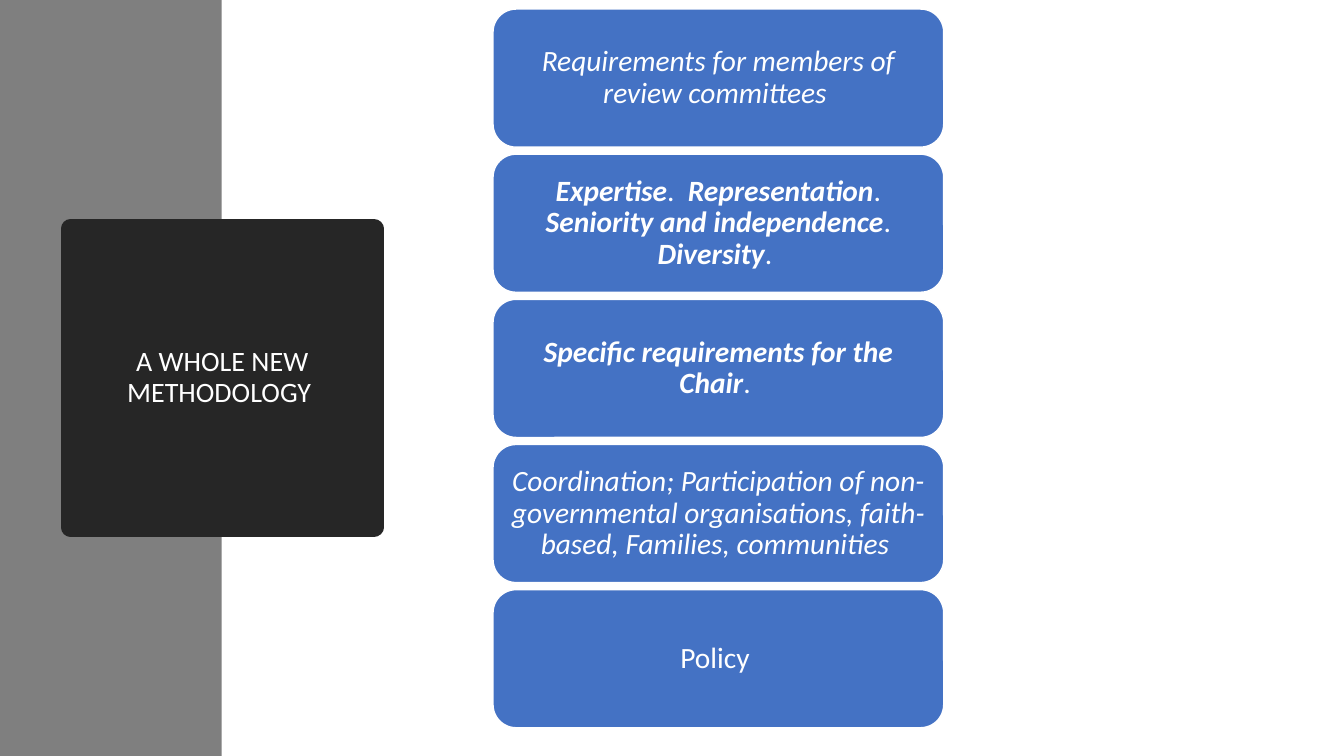
from pptx import Presentation, util as u
from pptx.dml.color import RGBColor
from pptx.enum import shapes, text
from pptx.oxml import parse_xml
from pptx.oxml.ns import nsdecls

WIDE, HIGH = 13.33, 7.5
FONT = "Calibri"
LEFT, TOP, STEP = 4.89, 0.09, 1.44    # column of cards
CARD = (4.47, 1.37)

# Each card is a list of (words, bold, italic)
CARDS = [
    [("Requirements for members of review committees ", False, True)],
    [("Expertise", True, True), (".  ", False, False),
     ("Representation", True, True), (". ", False, False),
     ("Seniority and independence", True, True), (". ", False, False),
     ("Diversity", True, True), (". ", False, False)],
    [("Specific requirements for the Chair", True, True),
     (". ", False, False)],
    [("Coordination; Participation of non-governmental organisations, "
      "faith-based, Families, communities ", False, True)],
    [("Policy ", False, False)],
]


def color(code):
    return RGBColor.from_string(code)


def paint(shape, fill, line=None, width=1):
    shape.fill.solid()
    shape.fill.fore_color.rgb = color(fill)
    if line:
        shape.line.color.rgb = color(line)
        shape.line.width = u.Pt(width)
    else:
        shape.line.fill.background()


def block(slide, kind, left, top, width, height):
    shape = slide.shapes.add_shape(
        kind, *map(u.Inches, (left, top, width, height)))
    shape.shadow.inherit = False
    return shape


def write(shape, runs, size):
    frame = shape.text_frame
    frame.word_wrap = True
    frame.auto_size = text.MSO_AUTO_SIZE.NONE
    frame.vertical_anchor = text.MSO_ANCHOR.MIDDLE
    frame.margin_left = frame.margin_right = u.Inches(0.09)
    frame.margin_top = frame.margin_bottom = u.Inches(0.04)
    para = frame.paragraphs[0]
    para.alignment = text.PP_ALIGN.CENTER
    para.line_spacing = 0.9
    para.font.name = FONT
    para.font.size = u.Pt(size)
    para.font.color.rgb = color("FFFFFF")
    for words, bold, italic in runs:
        run = para.add_run()
        run.text = words
        run.font.bold, run.font.italic = bold, italic


def band(slide):
    shape = block(slide, shapes.MSO_SHAPE.RECTANGLE, 0, 0, 2.2, HIGH)
    paint(shape, "7F7F7F")


def heading(slide):
    title = slide.shapes.title
    title.left, title.top = u.Inches(0.7), u.Inches(2.27)
    title.width, title.height = u.Inches(3.01), u.Inches(2.96)
    # Slightly rounded outline
    title._element.spPr.append(parse_xml(
        f'<a:prstGeom {nsdecls("a")} prst="roundRect"><a:avLst>'
        '<a:gd name="adj" fmla="val 2000"/></a:avLst></a:prstGeom>'))
    paint(title, "262626", "262626", 13.75)
    write(title, [("A WHOLE NEW METHODOLOGY ", False, False)], 20)
    # Bring the title in front of the band
    slide.shapes._spTree.append(title._element)


def card(slide, row, runs):
    shape = block(slide, shapes.MSO_SHAPE.ROUNDED_RECTANGLE,
                  LEFT, TOP + row * STEP, *CARD)
    paint(shape, "4472C4", "FFFFFF")
    write(shape, runs, 21)


def main():
    deck = Presentation()
    deck.slide_width, deck.slide_height = u.Inches(WIDE), u.Inches(HIGH)
    slide = deck.slides.add_slide(deck.slide_layouts[5])

    # Left side
    band(slide)
    heading(slide)

    # Column of cards
    for row, runs in enumerate(CARDS):
        card(slide, row, runs)

    deck.save("out.pptx")


if __name__ == "__main__":
    main()
